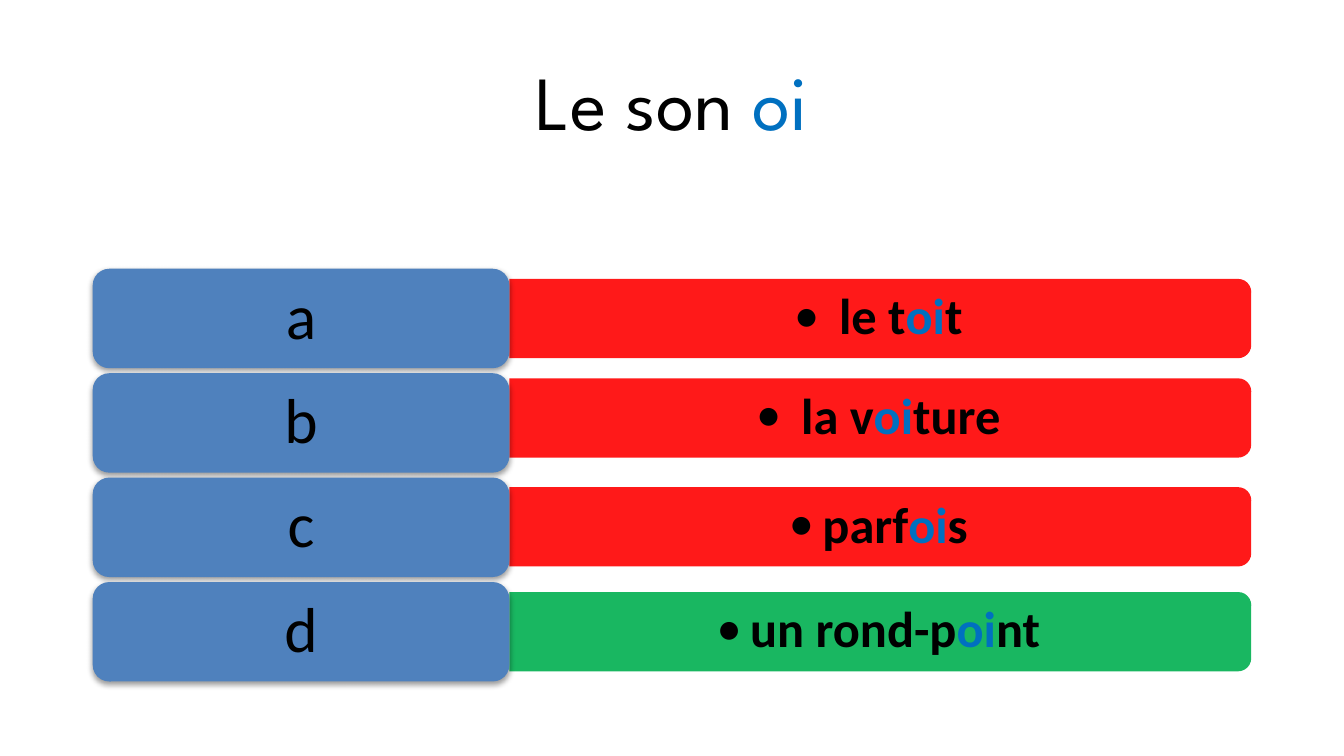
import pptx
import pptx.util
import pptx.oxml.ns
import lxml.etree
from pptx.dml.color import RGBColor
from pptx.enum.shapes import MSO_SHAPE
from pptx.enum.text import MSO_ANCHOR, PP_ALIGN
from pptx.util import Inches

COLOURS = {
    "text": "000000",
    "sound": "0070C0",
    "label": "4F81BD",
    "wrong": "FF0000",
    "right": "00B050",
}
SOUND = "oi"
ANSWERS = [
    ("a", " le t", "t", "wrong", 2.37),
    ("b", " la v", "ture", "wrong", 3.11),
    ("c", "parf", "s", "wrong", 3.92),
    ("d", "un rond-p", "nt", "right", 4.7),
]
LEFT, SPLIT, RIGHT = 0.69, 3.79, 9.31
LABEL_TOP, LABEL_HEIGHT = 2, 0.74
LABEL_STEP = LABEL_HEIGHT * 1.05
BAR_HEIGHT, TEXT_HEIGHT = 0.59, 0.53


def colour(name):
    return RGBColor.from_string(COLOURS[name])


def add_element(parent, tag, **attributes):
    return lxml.etree.SubElement(parent, pptx.oxml.ns.qn(tag), attributes)


def set_margins(frame, side, end):
    frame.margin_left = frame.margin_right = Inches(side)
    frame.margin_top = frame.margin_bottom = Inches(end)
    frame.vertical_anchor = MSO_ANCHOR.MIDDLE
    frame.word_wrap = True


def write_line(paragraph, parts, font, size, bold=False):
    paragraph.alignment = PP_ALIGN.CENTER
    paragraph.font.name = font
    paragraph.font.size = pptx.util.Pt(size)
    paragraph.font.bold = bold
    for part in parts:
        span = paragraph.add_run()
        span.text = part
        span.font.color.rgb = colour("sound" if part == SOUND else "text")


def fill_shape(shape, name):
    shape.fill.solid()
    shape.fill.fore_color.rgb = colour(name)
    shape.line.fill.background()
    shape.shadow.inherit = False


def add_bar(page, name, centre):
    length = RIGHT - SPLIT
    middle = (SPLIT + RIGHT) / 2
    bar = page.shapes.add_shape(
        MSO_SHAPE.ROUND_2_SAME_RECTANGLE,
        Inches(middle - BAR_HEIGHT / 2), Inches(centre - length / 2),
        Inches(BAR_HEIGHT), Inches(length))
    bar.rotation = 90
    fill_shape(bar, name)
    fill_colour = bar._element.spPr.find(".//" + pptx.oxml.ns.qn("a:srgbClr"))
    add_element(fill_colour, "a:alpha", val="90000")


def add_bullet_text(page, parts, centre):
    box = page.shapes.add_textbox(
        Inches(SPLIT), Inches(centre - TEXT_HEIGHT / 2),
        Inches(5.49), Inches(TEXT_HEIGHT))
    set_margins(box.text_frame, 0.11, 0.06)
    para = box.text_frame.paragraphs[0]
    para.level = 1
    para.line_spacing = 0.9
    write_line(para, parts, "Calibri", 27, True)
    properties = para._p.get_or_add_pPr()
    properties.set("marL", str(Inches(0.25)))
    properties.set("indent", str(Inches(-0.25)))
    defaults = properties.find(pptx.oxml.ns.qn("a:defRPr"))
    add_element(properties, "a:buFont", typeface="Calibri")
    add_element(properties, "a:buChar", char="•")
    properties.append(defaults)


def add_label(page, letter, top):
    label = page.shapes.add_shape(
        MSO_SHAPE.ROUNDED_RECTANGLE, Inches(LEFT), Inches(top),
        Inches(SPLIT - LEFT), Inches(LABEL_HEIGHT))
    fill_shape(label, "label")
    effects = label._element.spPr.find(pptx.oxml.ns.qn("a:effectLst"))
    shadow = add_element(
        effects, "a:outerShdw", blurRad=str(pptx.util.Pt(3.1)),
        dist=str(pptx.util.Pt(1.6)), dir="5400000", rotWithShape="0")
    shade = add_element(shadow, "a:srgbClr", val=COLOURS["text"])
    add_element(shade, "a:alpha", val="38000")
    set_margins(label.text_frame, 0.14, 0.07)
    para = label.text_frame.paragraphs[0]
    para.line_spacing = 0.9
    write_line(para, [letter], "Calibri", 34)


def set_title(page):
    title = page.shapes.title
    title.left, title.top = Inches(LEFT), Inches(0.2)
    title.width, title.height = Inches(RIGHT - LEFT), Inches(1.09)
    title.text_frame.vertical_anchor = MSO_ANCHOR.MIDDLE
    write_line(title.text_frame.paragraphs[0], ["Le son ", SOUND],
               "League Spartan", 41)


def main():
    deck = pptx.Presentation()
    deck.slide_width = Inches(10)
    deck.slide_height = deck.slide_width * 9 // 16
    page = deck.slides.add_slide(deck.slide_layouts[5])
    set_title(page)
    for row, (letter, start, end, verdict, centre) in enumerate(ANSWERS):
        add_bar(page, verdict, centre)
        add_bullet_text(page, [start, SOUND, end], centre)
        add_label(page, letter, LABEL_TOP + row * LABEL_STEP)
    deck.save("out.pptx")


if __name__ == "__main__":
    main()
